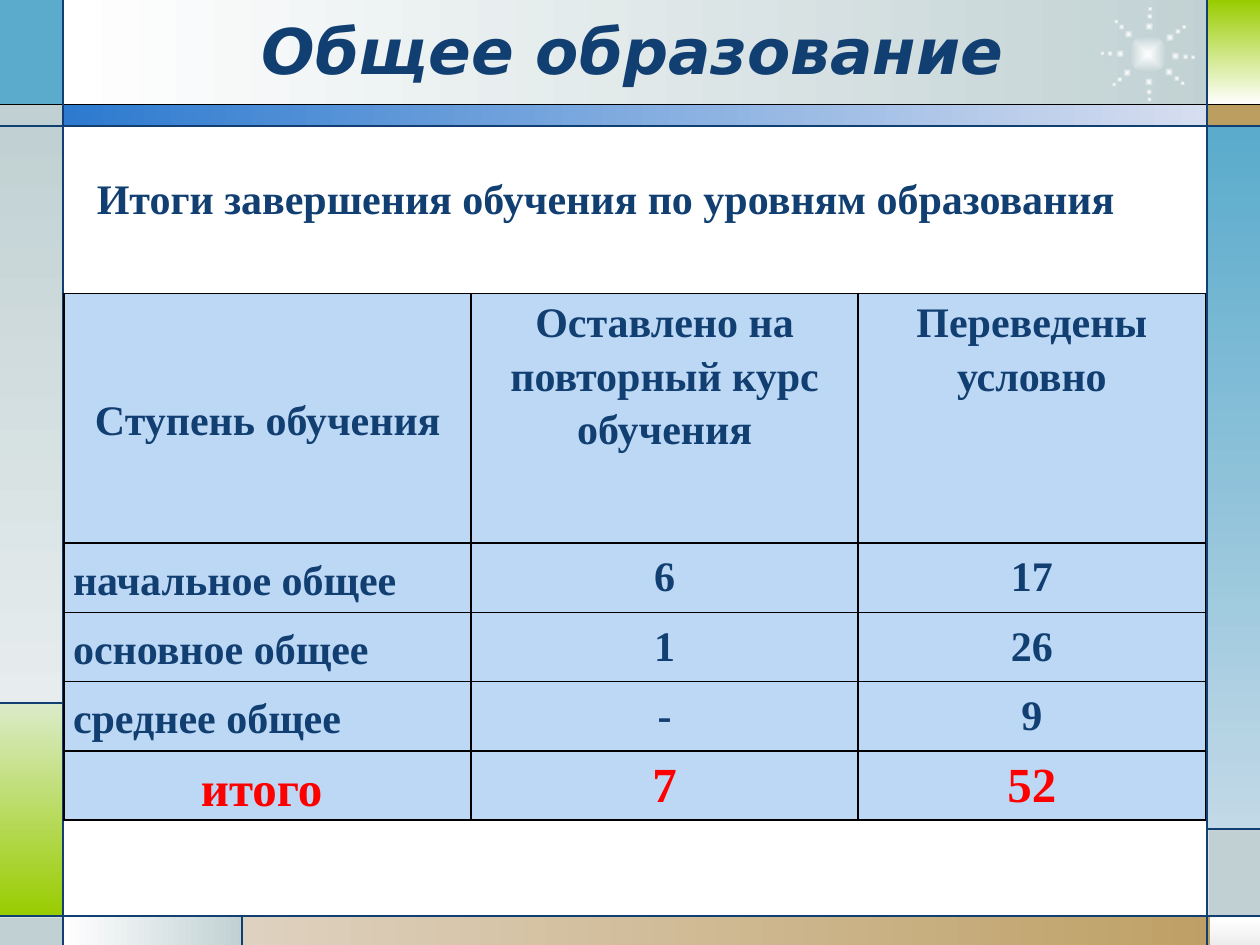
import math

from lxml import etree
from pptx import Presentation
from pptx.dml.color import RGBColor
from pptx.enum import shapes, text
from pptx.oxml import ns
from pptx.util import Inches, Pt

COLORS = {
    "navy": "113F71", "black": "000000", "red": "FF0000", "white": "FFFFFF",
    "sky": "5AABCC", "pale_sky": "C2D9E7", "gray": "C1D1D3", "mist": "E7EDEE",
    "lime": "99CC00", "pale_lime": "DBEBC9", "tan": "BD9E61", "pale_tan": "DED1BF",
    "blue": "2D7ACF", "pale_blue": "D7DEF0", "silver": "EDEDED", "cell": "BDD8F5",
}
SERIF = "Times New Roman"
SANS = "DejaVu Sans"
ACROSS, DOWN = 0, 270

PANELS = [
    (0.5, 0, 9.27, 0.84, "white", "gray", ACROSS),
    (0, 0, 0.5, 0.84, "sky"),
    (0, 0.83, 0.5, 0.17, "gray"),
    (0, 1, 0.5, 4.58, "gray", "mist", DOWN),
    (0, 5.58, 0.5, 1.69, "pale_lime", "lime", DOWN),
    (0, 7.28, 0.5, 0.22, "gray"),
    (0.5, 7.27, 1.43, 0.23, "white", "gray", ACROSS),
    (1.92, 7.27, 8.08, 0.23, "pale_tan", "tan", ACROSS),
    (9.6, 7.28, 0.4, 0.22, "white", "silver", DOWN),
    (9.59, 6.58, 0.41, 0.7, "gray"),
    (9.58, 1, 0.42, 5.58, "sky", "pale_sky", DOWN),
    (9.58, 0.83, 0.42, 0.17, "tan"),
    (9.59, 0, 0.41, 0.83, "lime", "white", DOWN),
    (0.5, 0.83, 9.09, 0.17, "blue", "pale_blue", ACROSS),
]
RULES = [
    (0, 0.83, 10, 0.83, "black"),
    (0, 1, 10, 1, "navy"),
    (0, 7.27, 10, 7.27, "navy"),
    (0.5, 0, 0.5, 7.5, "navy"),
    (9.58, 0, 9.58, 7.5, "navy"),
    (0, 5.58, 0.5, 5.58, "navy"),
    (1.92, 7.27, 1.92, 7.5, "navy"),
    (9.58, 6.58, 10, 6.58, "navy"),
]
RAY_ANGLES = (4, 40, 88, 138, 181, 226, 273, 323)
RAY_DOTS = ((0.22, 0.07), (0.3, 0.05), (0.36, 0.04))

TABLE_ROWS = [
    ("Ступень обучения", "Оставлено на повторный курс обучения", "Переведены условно"),
    ("начальное общее", "6", "17"),
    ("основное общее", "1", "26"),
    ("среднее общее", "-", "9"),
    ("итого ", "7", "52"),
]
COLUMN_SHARES = (3.23, 3.07, 2.76)
ROW_SHARES = (1.98, 0.55, 0.55, 0.55, 0.55)


def rgb(name):
    """Return the named colour."""
    return RGBColor.from_string(COLORS[name])


def add_panel(slide, kind, box, start, end=None, angle=ACROSS):
    """Add a borderless shape with a plain or two-colour fill."""
    shape = slide.shapes.add_shape(kind, *map(Inches, box))
    shape.shadow.inherit = False
    shape.line.fill.background()
    if end is None:
        shape.fill.solid()
        shape.fill.fore_color.rgb = rgb(start)
        return shape
    shape.fill.gradient()
    shape.fill.gradient_angle = angle
    for stop, name in zip(shape.fill.gradient_stops, (start, end)):
        stop.color.rgb = rgb(name)
    return shape


def add_glow(slide, center_x, center_y, size):
    """Add a dot that fades from its centre outwards."""
    box = (center_x - size / 2, center_y - size / 2, size, size)
    dot = add_panel(slide, shapes.MSO_SHAPE.OVAL, box, "white", "gray")
    gradient = dot._element.spPr.find(ns.qn("a:gradFill"))
    gradient.remove(gradient.find(ns.qn("a:lin")))
    shade = etree.SubElement(gradient, ns.qn("a:path"), path="shape")
    etree.SubElement(shade, ns.qn("a:fillToRect"), l="50000", t="50000", r="50000", b="50000")


def add_star(slide, left, top, size):
    """Draw the dotted star inside a square box."""
    center_x, center_y = left + size / 2, top + size / 2
    add_glow(slide, center_x, center_y, 0.4 * size)
    for angle in map(math.radians, RAY_ANGLES):
        for radius, dot_size in RAY_DOTS:
            reach = radius * size / 0.76
            add_glow(slide, center_x + reach * math.cos(angle),
                     center_y + reach * math.sin(angle), dot_size)


def add_frame(slide, left, top):
    """Draw the coloured border panels, the star and the thin rules."""
    for x, y, width, height, *fill in PANELS:
        add_panel(slide, shapes.MSO_SHAPE.RECTANGLE, (left + x, top + y, width, height), *fill)
    add_star(slide, left + 8.73, top + 0.05, 0.76)
    for x1, y1, x2, y2, color in RULES:
        ends = map(Inches, (left + x1, top + y1, left + x2, top + y2))
        rule = slide.shapes.add_connector(shapes.MSO_CONNECTOR.STRAIGHT, *ends)
        rule.line.color.rgb = rgb(color)
        rule.line.width = Pt(0.75)
        etree.SubElement(rule._element.spPr, ns.qn("a:effectLst"))


def format_runs(paragraph, size, font=SERIF, color="navy", italic=False):
    """Set the bold text style of a paragraph."""
    for run in paragraph.runs:
        run.font.name = font
        run.font.size = Pt(size)
        run.font.bold = True
        run.font.italic = italic
        run.font.color.rgb = rgb(color)


def add_heading(slide, box, words, align, anchor, **style):
    """Add a one-paragraph text box."""
    frame = slide.shapes.add_textbox(*map(Inches, box)).text_frame
    frame.word_wrap = True
    frame.vertical_anchor = anchor
    frame.text = words
    frame.paragraphs[0].alignment = align
    format_runs(frame.paragraphs[0], **style)


def add_borders(cell):
    """Give a table cell thin black edges."""
    properties = cell._tc.get_or_add_tcPr()
    for index, edge in enumerate(("lnL", "lnR", "lnT", "lnB")):
        line = etree.Element(ns.qn(f"a:{edge}"), w=str(Pt(1)))
        fill = etree.SubElement(line, ns.qn("a:solidFill"))
        etree.SubElement(fill, ns.qn("a:srgbClr"), val=COLORS["black"])
        properties.insert(index, line)


def add_results_table(slide, left, top, width, height):
    """Add the table of results with header and total rows."""
    box = map(Inches, (left, top, width, height))
    table = slide.shapes.add_table(len(TABLE_ROWS), len(COLUMN_SHARES), *box).table
    for column, share in zip(table.columns, COLUMN_SHARES):
        column.width = Inches(width * share / sum(COLUMN_SHARES))
    for row, share in zip(table.rows, ROW_SHARES):
        row.height = Inches(height * share / sum(ROW_SHARES))
    last = len(TABLE_ROWS) - 1
    for row_index, values in enumerate(TABLE_ROWS):
        for column_index, value in enumerate(values):
            cell = table.cell(row_index, column_index)
            header, label = row_index == 0, column_index == 0
            cell.margin_left = cell.margin_right = Inches(0.07)
            cell.margin_top = cell.margin_bottom = 0
            cell.vertical_anchor = (text.MSO_ANCHOR.TOP if header and not label
                                    else text.MSO_ANCHOR.MIDDLE)
            cell.fill.solid()
            cell.fill.fore_color.rgb = rgb("cell")
            add_borders(cell)
            cell.text_frame.text = value
            paragraph = cell.text_frame.paragraphs[0]
            paragraph.alignment = (text.PP_ALIGN.JUSTIFY if label and 0 < row_index < last
                                   else text.PP_ALIGN.CENTER)
            if header or label:
                paragraph.line_spacing = 1.15
                paragraph.space_after = Pt(10)
            total = row_index == last
            format_runs(paragraph, 28 if total else 24, color="red" if total else "navy")


def main():
    """Build and save the slide."""
    presentation = Presentation()
    presentation.slide_width, presentation.slide_height = Inches(10), Inches(7.5)
    slide = presentation.slides.add_slide(presentation.slide_layouts[6])
    add_frame(slide, 0, 0)
    add_results_table(slide, 0.51, 2.33, 9.06, 4.18)
    add_heading(slide, (0.51, 0.16, 9.02, 0.46), "Общее образование", text.PP_ALIGN.CENTER,
                text.MSO_ANCHOR.MIDDLE, size=36, font=SANS, italic=True)
    add_heading(slide, (0.67, 1.32, 8.9, 0.5), "Итоги завершения обучения по уровням образования",
                text.PP_ALIGN.LEFT, text.MSO_ANCHOR.TOP, size=24)
    presentation.save("out.pptx")


if __name__ == "__main__":
    main()
